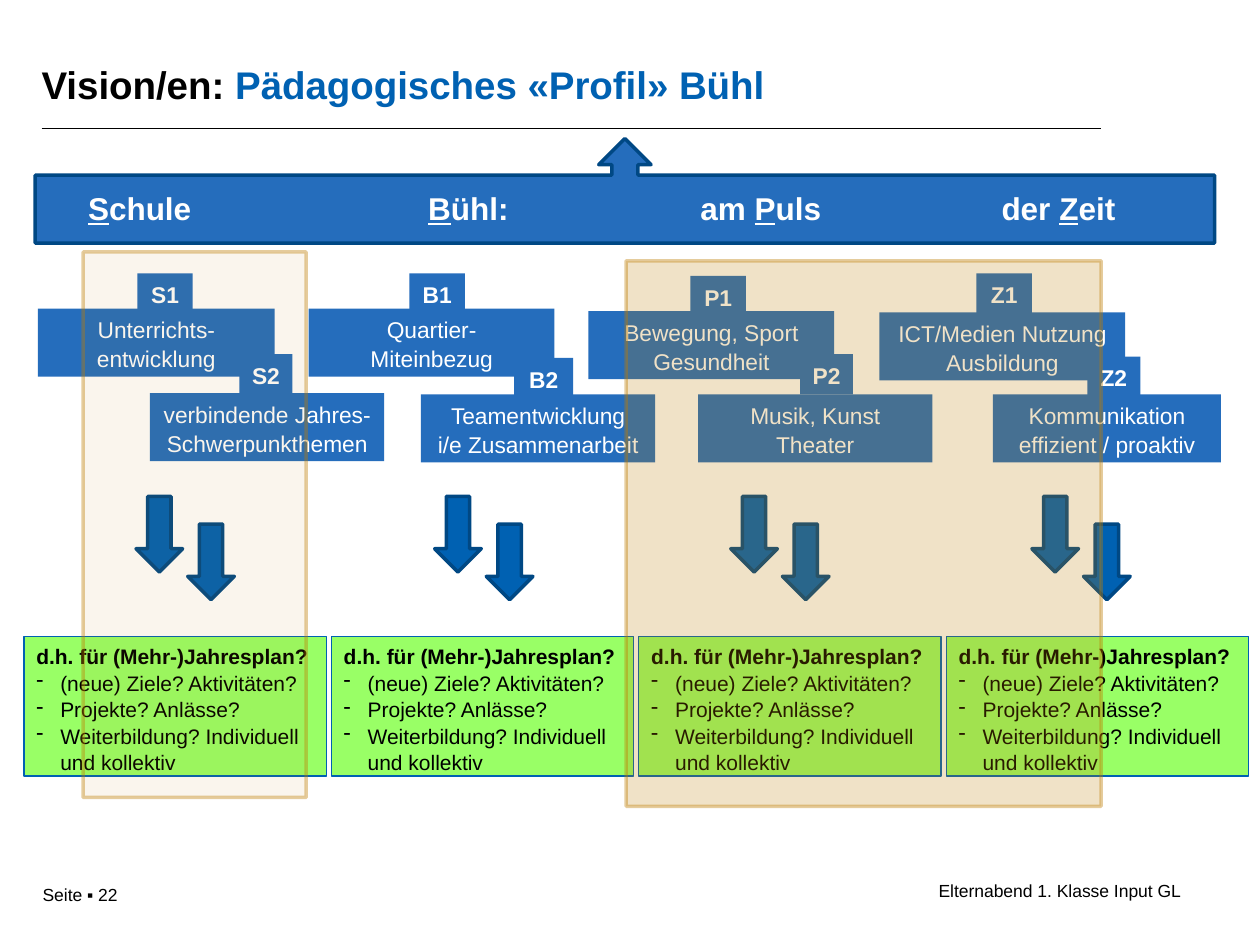
from lxml import etree
from pptx import Presentation
from pptx import util as u
from pptx.dml.color import RGBColor
from pptx.enum import shapes, text
from pptx.oxml import ns

BLACK = RGBColor(0x00, 0x00, 0x00)
WHITE = RGBColor(0xFF, 0xFF, 0xFF)
BLUE = RGBColor(0x00, 0x61, 0xB2)
PANEL_BLUE = RGBColor(0x25, 0x6D, 0xBC)
EDGE_BLUE = RGBColor(0x00, 0x48, 0x84)
GREEN = RGBColor(0x99, 0xFF, 0x66)
OCHRE = RGBColor(0xBE, 0x7C, 0x01)

BANNER = [("S", True), ("chule\t", False), ("B", True), ("ühl:\tam ", False),
          ("P", True), ("uls\tder ", False), ("Z", True), ("eit", False)]
BANNER_TABS = (2.7, 4.86, 7.25)

# Each topic: label, label box, lines, panel box
TOPICS = [
    ("S1", (1.09, 2.17, 0.44, 0.32), ["Unterrichts-entwicklung"], (0.3, 2.45, 1.88, 0.54)),
    ("S2", (1.9, 2.81, 0.42, 0.32), ["verbindende Jahres-Schwerpunkthemen"], (1.19, 3.12, 1.86, 0.54)),
    ("B1", (3.25, 2.17, 0.44, 0.32), ["Quartier-", "Miteinbezug"], (2.45, 2.45, 1.95, 0.54)),
    ("B2", (4.08, 2.84, 0.47, 0.32), ["Teamentwicklung", "i/e Zusammenarbeit"], (3.34, 3.13, 1.86, 0.54)),
    ("P1", (5.48, 2.19, 0.44, 0.32), ["Bewegung, Sport", "Gesundheit"], (4.67, 2.47, 1.95, 0.54)),
    ("P2", (6.35, 2.81, 0.42, 0.32), ["Musik, Kunst", "Theater"], (5.54, 3.13, 1.86, 0.54)),
    ("Z1", (7.75, 2.17, 0.44, 0.32), ["ICT/Medien Nutzung", "Ausbildung"], (6.98, 2.48, 1.95, 0.54)),
    ("Z2", (8.63, 2.83, 0.42, 0.32), ["Kommunikation", "effizient / proaktiv"], (7.88, 3.13, 1.81, 0.54)),
]
ARROW_LEFTS = (1.08, 3.45, 5.8, 8.19)
PLAN_HEADING = "d.h. für (Mehr-)Jahresplan?"
PLAN_ITEMS = ["(neue) Ziele? Aktivitäten?", "Projekte? Anlässe?",
              "Weiterbildung? Individuell und kollektiv"]
HIGHLIGHTS = [((4.97, 2.07, 3.77, 4.33), 22), ((0.66, 2, 1.77, 4.33), 7)]


class Deck:
    """Holds the style and the current slide, with a method per kind of element."""

    font = "Arial"
    spacing = 1.05

    def __init__(self):
        self.deck = Presentation()
        self.deck.slide_width, self.deck.slide_height = u.Inches(10), u.Inches(7.5)
        self.slide = self.deck.slides.add_slide(self.deck.slide_layouts[5])

    def place(self, box):
        return [u.Inches(length) for length in box]

    def run(self, paragraph, words, size, color, bold=False, underline=False):
        run = paragraph.add_run()
        run.text = words
        font = run.font
        font.name, font.size, font.bold = self.font, u.Pt(size), bold
        font.underline = underline
        font.color.rgb = color

    def title(self, box, parts):
        title = self.slide.shapes.title
        title.left, title.top, title.width, title.height = self.place(box)
        frame = title.text_frame
        frame.margin_left = frame.margin_right = 0
        frame.vertical_anchor = text.MSO_ANCHOR.MIDDLE
        paragraph = frame.paragraphs[0]
        paragraph.alignment = text.PP_ALIGN.LEFT
        paragraph.line_spacing = 0.9
        for words, color in parts:
            self.run(paragraph, words, 22, color, bold=True)

    def rule(self, start, end):
        line = self.slide.shapes.add_connector(
            shapes.MSO_CONNECTOR.STRAIGHT, *self.place(start + end))
        line.line.color.rgb = BLACK
        line.line.width = u.Pt(0.75)
        etree.SubElement(line._element.spPr, ns.qn("a:effectLst"))

    def textbox(self, box, fill=None):
        textbox = self.slide.shapes.add_textbox(*self.place(box))
        textbox.text_frame.word_wrap = True
        if fill is not None:
            textbox.fill.solid()
            textbox.fill.fore_color.rgb = fill
        return textbox

    def lines(self, box, lines, size, color, fill=None, bold=False, align=None):
        frame = self.textbox(box, fill).text_frame
        for index, words in enumerate(lines):
            paragraph = frame.add_paragraph() if index else frame.paragraphs[0]
            paragraph.alignment = align
            paragraph.line_spacing = self.spacing
            self.run(paragraph, words, size, color, bold)
        return frame

    def label(self, box, words):
        frame = self.lines(box, [words], 13, WHITE, PANEL_BLUE, True, text.PP_ALIGN.CENTER)
        frame.margin_left = frame.margin_right = 0

    def banner(self, box, parts, tabs):
        paragraph = self.textbox(box, PANEL_BLUE).text_frame.paragraphs[0]
        stops = etree.SubElement(paragraph._p.get_or_add_pPr(), ns.qn("a:tabLst"))
        for tab in tabs:
            etree.SubElement(stops, ns.qn("a:tab"), pos=str(u.Inches(tab)), algn="l")
        for words, underline in parts:
            self.run(paragraph, words, 18, WHITE, True, underline)

    def plan(self, box, heading, items):
        plan = self.textbox(box, GREEN)
        plan.line.color.rgb = BLUE
        plan.line.width = u.Pt(0.75)
        paragraph = plan.text_frame.paragraphs[0]
        paragraph.line_spacing = self.spacing
        self.run(paragraph, heading, 12, BLACK, bold=True)
        indent = u.Inches(0.19)
        for item in items:
            paragraph = plan.text_frame.add_paragraph()
            paragraph.line_spacing = self.spacing
            properties = paragraph._p.get_or_add_pPr()
            properties.set("marL", str(indent))
            properties.set("indent", str(-indent))
            etree.SubElement(properties, ns.qn("a:buChar"), char="-")
            self.run(paragraph, item, 12, BLACK)

    def shape(self, kind, box, fill, edge):
        shape = self.slide.shapes.add_shape(kind, *self.place(box))
        shape.shadow.inherit = False
        shape.fill.solid()
        shape.fill.fore_color.rgb = fill
        shape.line.color.rgb = edge
        shape.line.width = u.Pt(2)
        return shape

    def highlight(self, box, opacity):
        highlight = self.shape(shapes.MSO_SHAPE.RECTANGLE, box, OCHRE, OCHRE)
        colors = highlight._element.spPr.iter(ns.qn("a:srgbClr"))
        for color, percent in zip(list(colors), (opacity, 38)):
            etree.SubElement(color, ns.qn("a:alpha"), val=str(percent * 1000))

    def save(self):
        self.deck.save("out.pptx")


def main():
    deck = Deck()
    deck.lines((0.24, 6.96, 1.47, 0.27), ["Seite ▪ 22"], 10, BLACK)
    deck.rule((0.33, 1.02), (8.74, 1.02))
    deck.title((0.33, 0.31, 7.5, 0.76),
               [("Vision/en: ", BLACK), ("Pädagogisches «Profil» Bühl", BLUE)])
    deck.lines((7.07, 6.93, 2.68, 0.27), ["Elternabend 1. Klasse Input GL"], 10, BLACK,
               align=text.PP_ALIGN.CENTER)
    deck.shape(shapes.MSO_SHAPE.UP_ARROW_CALLOUT, (0.28, 1.1, 9.36, 0.83),
               PANEL_BLUE, EDGE_BLUE)
    deck.banner((0.6, 1.45, 8.79, 0.4), BANNER, BANNER_TABS)

    for label, label_box, topic, topic_box in TOPICS:
        deck.lines(topic_box, topic, 13, WHITE, PANEL_BLUE, align=text.PP_ALIGN.CENTER)
        deck.label(label_box, label)

    for column, left in enumerate(ARROW_LEFTS):
        for x, y in ((left, 3.94), (left + 0.41, 4.16)):
            deck.shape(shapes.MSO_SHAPE.DOWN_ARROW, (x, y, 0.37, 0.6), BLUE, EDGE_BLUE)
        deck.plan((0.19 + 2.44 * column, 5.05, 2.4, 1.11), PLAN_HEADING, PLAN_ITEMS)

    for box, opacity in HIGHLIGHTS:
        deck.highlight(box, opacity)
    deck.save()


if __name__ == "__main__":
    main()
